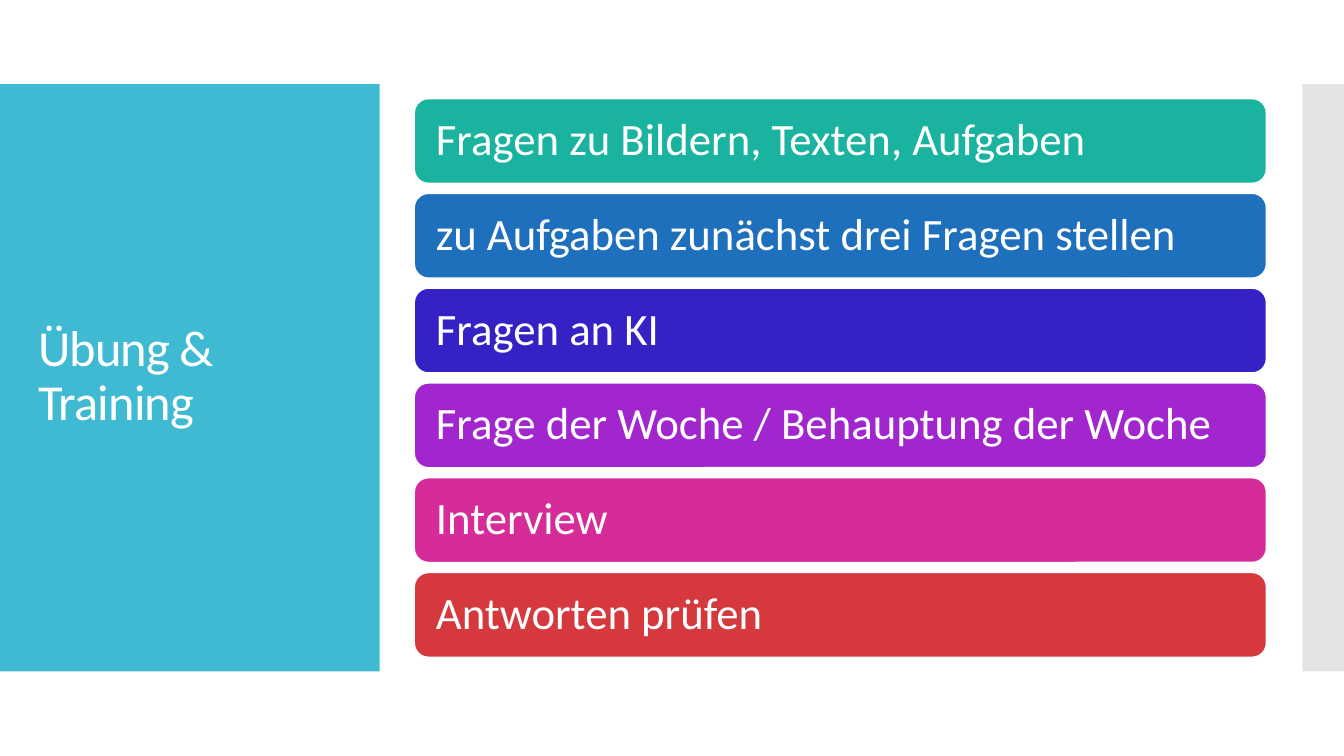
import pptx
import pptx.dml.color
import pptx.enum.shapes
import pptx.enum.text
import pptx.oxml.ns
import pptx.util
from lxml import etree

Pt = pptx.util.Pt
RGB = pptx.dml.color.RGBColor.from_string
SHAPE = pptx.enum.shapes.MSO_SHAPE
COLORS = {
    "white": "FFFFFF", "panel": "40BAD2", "edge": "C8C8C8",
    "teal": "1AB39F", "blue": "1E6FBC", "indigo": "3422C5",
    "purple": "A126CE", "pink": "D52C99", "red": "D5393D",
}


def write(tf, text, size, inset, spacing=None):
    """Set one left-aligned, vertically centred white paragraph."""
    tf.word_wrap = True
    tf.auto_size = pptx.enum.text.MSO_AUTO_SIZE.NONE
    tf.vertical_anchor = pptx.enum.text.MSO_ANCHOR.MIDDLE
    tf.margin_left = tf.margin_right = Pt(inset)
    tf.margin_top = tf.margin_bottom = Pt(3.6)
    p = tf.paragraphs[0]
    p.alignment = pptx.enum.text.PP_ALIGN.LEFT
    p.line_spacing = 0.9
    r = p.add_run()
    r.text = text
    r.font.name = "Calibri"
    r.font.size = Pt(size)
    r.font.color.rgb = RGB(COLORS["white"])
    if spacing is not None:
        r.font._element.set("spc", str(round(spacing * 100)))


def add_block(s, kind, box, color):
    sp = s.shapes.add_shape(kind, *[Pt(v) for v in box])
    sp.shadow.inherit = False
    sp.fill.solid()
    sp.fill.fore_color.rgb = RGB(COLORS[color])
    sp.line.fill.background()
    return sp


prs = pptx.Presentation()
prs.slide_width, prs.slide_height = Pt(960), Pt(540)
s = prs.slides.add_slide(prs.slide_layouts[5])

# Side panels
add_block(s, SHAPE.RECTANGLE, (0, 60, 271.2, 419.5), "panel")
edge = add_block(s, SHAPE.RECTANGLE, (930.2, 60, 29.8, 419.5), "edge")
edge_color = edge.fill._xPr.find(".//" + pptx.oxml.ns.qn("a:srgbClr"))
etree.SubElement(edge_color, pptx.oxml.ns.qn("a:alpha"), val="50000")

# Title, raised above its panel
title = s.shapes.title
title.left, title.top, title.width, title.height = Pt(20), Pt(88.5), Pt(232), Pt(362)
write(title.text_frame, "Übung & Training", size=36, inset=7.2, spacing=-0.6)
s.shapes._spTree.append(title._element)

# Stack of exercise bars
exercises = [
    ("Fragen zu Bildern, Texten, Aufgaben", "teal"),
    ("zu Aufgaben zunächst drei Fragen stellen", "blue"),
    ("Fragen an KI", "indigo"),
    ("Frage der Woche / Behauptung der Woche", "purple"),
    ("Interview", "pink"),
    ("Antworten prüfen", "red"),
]
for i, (text, color) in enumerate(exercises):
    bar = add_block(s, SHAPE.ROUNDED_RECTANGLE, (296, 70.5 + i * 67.7, 608.5, 60.4), color)
    bar.line.color.rgb = RGB(COLORS["white"])
    bar.line.width = Pt(0.85)
    write(bar.text_frame, text, size=32, inset=12.4)

prs.save("out.pptx")
